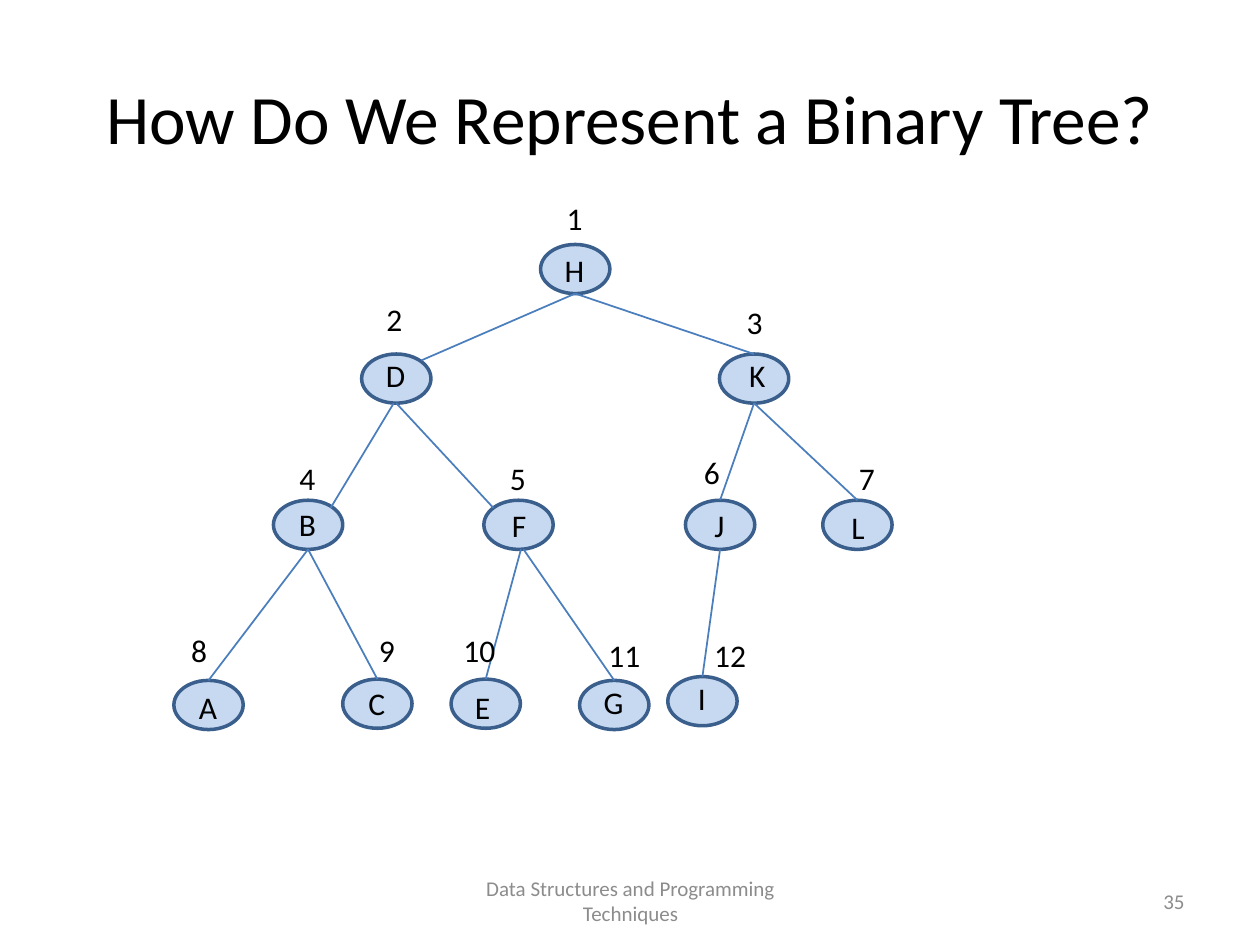
"""Build a slide that shows a binary tree with level-order node numbers."""
import pptx
import pptx.dml.color
import pptx.enum.shapes
import pptx.enum.text
import pptx.util
from lxml import etree
from pptx.util import Inches

ALIGN = pptx.enum.text.PP_ALIGN
MIDDLE = pptx.enum.text.MSO_ANCHOR.MIDDLE
A_NS = "http://schemas.openxmlformats.org/drawingml/2006/main"
NODE_W, NODE_H = 0.55, 0.39


def rgb(color):
    """Turn a hex string into a colour."""
    return pptx.dml.color.RGBColor.from_string(color)


def write(sp, text, size, color="000000", align=ALIGN.CENTER, anchor=None):
    """Fill a shape with one formatted paragraph."""
    tf = sp.text_frame
    tf.word_wrap = True
    if anchor is not None:
        tf.vertical_anchor = anchor
    p = tf.paragraphs[0]
    p.text = text
    p.alignment = align
    p.font.name = "Calibri"
    p.font.size = pptx.util.Pt(size)
    p.font.color.rgb = rgb(color)


prs = pptx.Presentation()
prs.slide_width, prs.slide_height = Inches(10), Inches(7.5)
s = prs.slides.add_slide(prs.slide_layouts[5])

title = s.shapes.title
title.left, title.top = Inches(0.5), Inches(0.3)
title.width, title.height = Inches(9), Inches(1.25)
write(title, "How Do We Represent a Binary Tree?", 39.6, anchor=MIDDLE)

# Letter: node position, letter position, number position
nodes = {
    "H": ((4.29, 1.94), (4.36, 1.94), (4.36, 1.53)),
    "D": ((2.87, 2.81), (2.94, 2.78), (2.93, 2.33)),
    "K": ((5.71, 2.81), (5.81, 2.78), (5.79, 2.36)),
    "B": ((2.17, 3.97), (2.24, 3.96), (2.24, 3.59)),
    "F": ((3.84, 3.97), (3.92, 3.97), (3.91, 3.59)),
    "J": ((5.44, 3.97), (5.51, 3.97), (5.45, 3.55)),
    "L": ((6.53, 3.97), (6.61, 3.98), (6.68, 3.59)),
    "A": ((1.38, 5.40), (1.45, 5.41), (1.38, 4.96)),
    "C": ((2.72, 5.39), (2.79, 5.38), (2.87, 4.96)),
    "E": ((3.58, 5.39), (3.63, 5.41), (3.53, 4.96)),
    "G": ((4.60, 5.40), (4.67, 5.37), (4.68, 5.00)),
    "I": ((5.30, 5.37), (5.37, 5.34), (5.52, 5.00)),
}

# Parent, child, shift of the start, shift of the end
edges = [
    ("H", "D", 0, (0.2, 0.05)), ("H", "K", 0, (0, 0)),
    ("D", "B", -0.02, (0.18, 0.06)), ("D", "F", 0, (-0.2, 0.06)),
    ("K", "J", 0, (0, 0)), ("K", "L", 0, (0, 0)),
    ("B", "A", 0, (0, 0)), ("B", "C", 0, (0, 0)),
    ("F", "E", 0.02, (0, 0)), ("F", "G", 0.04, (0, 0)),
    ("J", "I", 0, (0, 0)),
]

for (x, y), _, _ in nodes.values():
    sp = s.shapes.add_shape(pptx.enum.shapes.MSO_SHAPE.OVAL, Inches(x), Inches(y),
                            Inches(NODE_W), Inches(NODE_H))
    sp.shadow.inherit = False
    sp.fill.solid()
    sp.fill.fore_color.rgb = rgb("C6D9F1")
    sp.line.color.rgb = rgb("3A5F8C")
    sp.line.width = pptx.util.Pt(2)

for parent, child, shift, (dx, dy) in edges:
    x1, y1 = nodes[parent][0]
    x2, y2 = nodes[child][0]
    line = s.shapes.add_connector(
        pptx.enum.shapes.MSO_CONNECTOR.STRAIGHT,
        Inches(x1 + NODE_W / 2 + shift), Inches(y1 + NODE_H),
        Inches(x2 + NODE_W / 2 + dx), Inches(y2 + dy))
    line.line.color.rgb = rgb("4B7EBC")
    line.line.width = pptx.util.Pt(1)
    etree.SubElement(line._element.spPr, f"{{{A_NS}}}effectLst")

for number, (letter, (_, letter_at, number_at)) in enumerate(nodes.items(), 1):
    for text, (x, y) in ((letter, letter_at), (str(number), number_at)):
        width = 0.4 if len(text) == 1 else 0.55
        sp = s.shapes.add_textbox(Inches(x), Inches(y), Inches(width), Inches(0.4))
        write(sp, text, 18)

for text, x, width, align in (
    ("Data Structures and Programming Techniques", 3.42, 3.17, ALIGN.CENTER),
    ("35", 7.17, 2.33, ALIGN.RIGHT),
):
    sp = s.shapes.add_textbox(Inches(x), Inches(6.95), Inches(width), Inches(0.4))
    write(sp, text, 12, "8C8C8C", align, MIDDLE)

prs.save("out.pptx")
